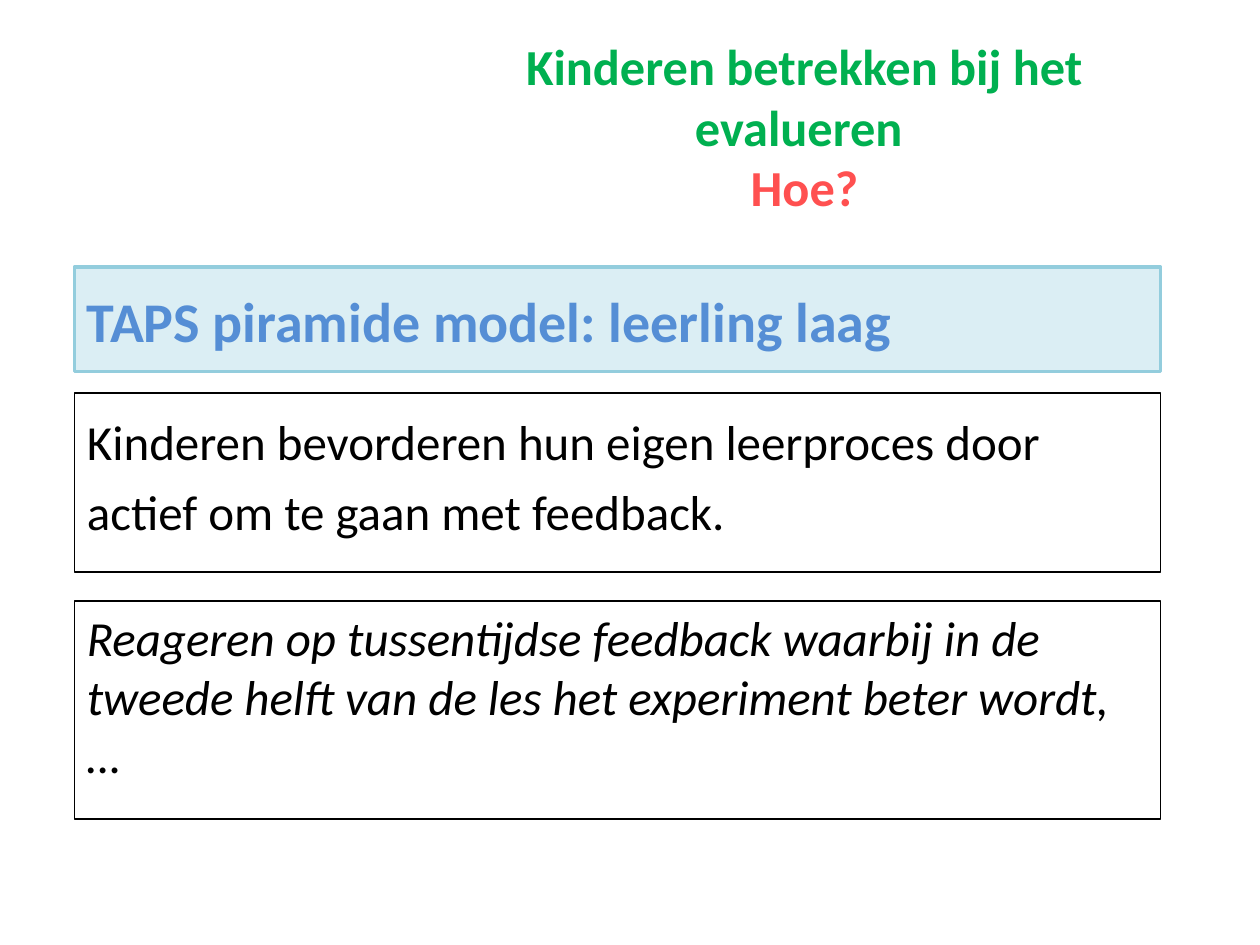
from pptx import Presentation
from pptx.dml.color import RGBColor
from pptx.enum.shapes import MSO_SHAPE
from pptx.enum.text import MSO_ANCHOR, MSO_AUTO_SIZE, PP_ALIGN
from pptx.oxml.xmlchemy import OxmlElement
from pptx.util import Inches, Pt

RECTANGLE = MSO_SHAPE.RECTANGLE
TOP, MIDDLE = MSO_ANCHOR.TOP, MSO_ANCHOR.MIDDLE
NO_AUTOFIT = MSO_AUTO_SIZE.NONE
LEFT, CENTER = PP_ALIGN.LEFT, PP_ALIGN.CENTER

PANEL_LEFT, PANEL_WIDTH = 0.59, 8.62


def color(hex_code):
    return RGBColor.from_string(hex_code)


def place(shape, box):
    shape.left, shape.top, shape.width, shape.height = map(Inches, box)


def write(shape, lines, size, bold=False, italic=False, align=LEFT,
          anchor=TOP, spacing=1.0):
    frame = shape.text_frame
    frame.word_wrap = True
    frame.auto_size = NO_AUTOFIT
    frame.vertical_anchor = anchor
    paragraph = frame.paragraphs[0]
    properties = paragraph._p.get_or_add_pPr()
    properties.set("marL", "0")
    properties.set("indent", "0")
    properties.append(OxmlElement("a:buNone"))
    paragraph.alignment = align
    paragraph.line_spacing = spacing
    paragraph.space_before = Pt(0)
    for index, (text, text_color) in enumerate(lines):
        if index:
            paragraph.add_line_break()
        run = paragraph.add_run()
        run.text = text
        run.font.name = "Calibri"
        run.font.size = Pt(size)
        run.font.bold = bold
        run.font.italic = italic
        run.font.color.rgb = color(text_color)


def outline(panel, line_color, width, fill=None):
    if fill:
        panel.fill.solid()
        panel.fill.fore_color.rgb = color(fill)
    else:
        panel.fill.background()
    panel.line.color.rgb = color(line_color)
    panel.line.width = Pt(width)


def add_panel(slide, box):
    panel = slide.shapes.add_shape(RECTANGLE, *map(Inches, box))
    panel.shadow.inherit = False
    return panel


def build_title(slide, box):
    title = slide.shapes.title
    place(title, box)
    write(title, [("Kinderen betrekken bij het evalueren ", "00B050"),
                  ("Hoe?", "FF5050")],
          size=28.8, bold=True, align=CENTER, anchor=MIDDLE)


def build_definition(slide, box):
    definition = slide.placeholders[1]
    place(definition, box)
    outline(definition, "000000", 0.75)
    write(definition, [("Kinderen bevorderen hun eigen leerproces door "
                        "actief om te gaan met feedback.", "000000")],
          size=28, spacing=1.2)


def build_heading(slide, box):
    heading = add_panel(slide, box)
    outline(heading, "93CDDD", 2, fill="DBEEF4")
    write(heading, [("TAPS piramide model: leerling laag", "558ED5")],
          size=32, bold=True, spacing=1.2)


def build_example(slide, box):
    example = add_panel(slide, box)
    outline(example, "000000", 0.75)
    write(example, [("Reageren op tussentijdse feedback waarbij in de tweede "
                     "helft van de les het experiment beter wordt, …",
                     "000000")],
          size=28, italic=True)


def main():
    presentation = Presentation()
    presentation.slide_width = Inches(10)
    presentation.slide_height = Inches(7.5)
    slide = presentation.slides.add_slide(presentation.slide_layouts[1])
    build_title(slide, (3.27, 0.3, 6.23, 1.4))
    build_definition(slide, (PANEL_LEFT, 3.12, PANEL_WIDTH, 1.42))
    build_heading(slide, (PANEL_LEFT, 2.12, PANEL_WIDTH, 0.83))
    build_example(slide, (PANEL_LEFT, 4.77, PANEL_WIDTH, 1.73))
    presentation.save("out.pptx")


if __name__ == "__main__":
    main()
